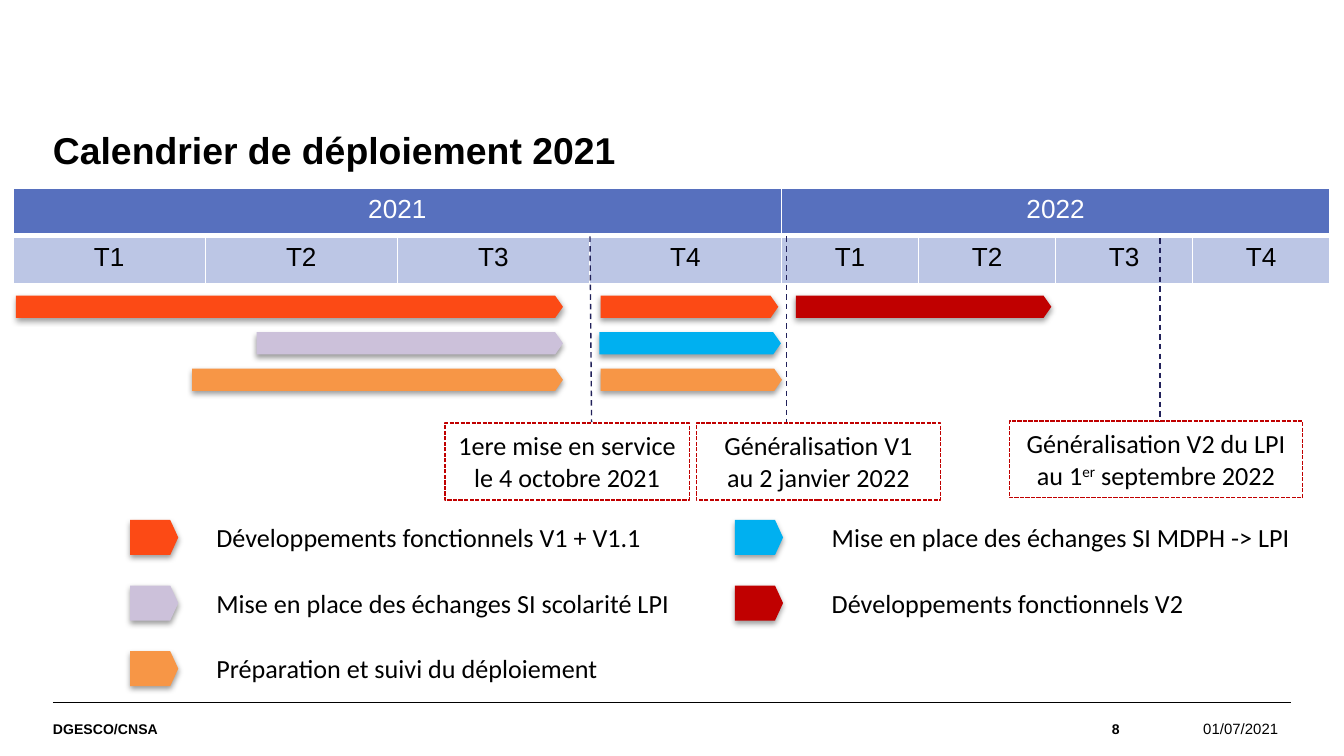
from typing import NamedTuple

from lxml import etree
from pptx import Presentation
from pptx.dml.color import RGBColor
from pptx.enum.dml import MSO_LINE
from pptx.enum.shapes import MSO_CONNECTOR, MSO_SHAPE
from pptx.enum.text import MSO_ANCHOR, MSO_AUTO_SIZE, PP_ALIGN
from pptx.oxml import parse_xml
from pptx.oxml.ns import nsdecls, qn
from pptx.util import Cm, Pt

PENTAGON, RECTANGLE = MSO_SHAPE.PENTAGON, MSO_SHAPE.RECTANGLE
STRAIGHT = MSO_CONNECTOR.STRAIGHT
LEFT, CENTER, RIGHT = PP_ALIGN.LEFT, PP_ALIGN.CENTER, PP_ALIGN.RIGHT
TOP, MIDDLE = MSO_ANCHOR.TOP, MSO_ANCHOR.MIDDLE
FIT_SHAPE = MSO_AUTO_SIZE.SHAPE_TO_FIT_TEXT
DASH, SHORT_DASH = MSO_LINE.DASH, MSO_LINE.SQUARE_DOT

BLACK, WHITE, NAVY = "000000", "FFFFFF", "21215A"
HEADER, QUARTER = "5770BE", "BCC6E5"
ORANGE, LILAC, AMBER = "FC4A15", "CCC1DA", "F79646"
BLUE, RED = "00B0F0", "C00000"


class Bar(NamedTuple):
    row: int
    left: float
    width: float
    color: str


class LegendItem(NamedTuple):
    column: int
    row: int
    color: str
    label: str
    width: float


class Milestone(NamedTuple):
    left: float
    top: float
    width: float
    runs: list[str]  # every second run is superscript
    line_top: tuple[float, float]
    line_end: tuple[float, float]


BAR_TOP, BAR_STEP, BAR_HEIGHT = 5.59, 0.69, 0.42
BARS = [
    Bar(0, 0.3, 10.34, ORANGE),
    Bar(1, 4.85, 5.79, LILAC),
    Bar(2, 3.63, 7.01, AMBER),
    Bar(0, 11.35, 3.36, ORANGE),
    Bar(1, 11.33, 3.43, BLUE),
    Bar(2, 11.35, 3.43, AMBER),
    Bar(0, 15.04, 4.83, RED),
]

LEGEND_TOP, LEGEND_STEP = 9.83, 1.24
LEGEND_COLUMNS = [(2.46, 3.84), (13.89, 15.47)]  # swatch left, label left
LEGEND = [
    LegendItem(0, 0, ORANGE, "Développements fonctionnels V1 + V1.1", 8.86),
    LegendItem(0, 1, LILAC, "Mise en place des échanges SI scolarité LPI", 9.3),
    LegendItem(0, 2, AMBER, "Préparation et suivi du déploiement", 9.19),
    LegendItem(1, 0, BLUE, "Mise en place des échanges SI MDPH -> LPI", 9.19),
    LegendItem(1, 1, RED, "Développements fonctionnels V2", 7.32),
]

MILESTONES = [
    Milestone(8.41, 8, 4.62, ["1ere mise en service le 4 octobre 2021"],
              (11.15, 4.47), (11.18, 7.98)),
    Milestone(13.16, 8, 4.62, ["Généralisation V1 au 2 janvier 2022"],
              (14.86, 4.47), (14.86, 7.98)),
    Milestone(19.08, 7.96, 5.54,
              ["Généralisation V2 du LPI au 1", "er", " septembre 2022"],
              (21.92, 4.5), (21.92, 7.96)),
]


def rgb(color: str) -> RGBColor:
    return RGBColor.from_string(color)


def style_paragraph(p, size: float, color: str = BLACK, font: str = "Arial",
                    bold: bool = False, align=LEFT) -> None:
    p.alignment = align
    p.font.size, p.font.name, p.font.bold = Pt(size), font, bold
    p.font.color.rgb = rgb(color)


def add_text(s, left: float, top: float, width: float, height: float,
             text: str, size: float, font: str = "Arial", bold: bool = False,
             align=LEFT, anchor=TOP, inset: bool = True):
    tf = s.shapes.add_textbox(Cm(left), Cm(top), Cm(width), Cm(height)).text_frame
    tf.word_wrap, tf.vertical_anchor = True, anchor
    if not inset:
        tf.margin_left = tf.margin_right = tf.margin_top = tf.margin_bottom = 0
    p = tf.paragraphs[0]
    p.text = text
    style_paragraph(p, size, font=font, bold=bold, align=align)
    return tf


def add_line(s, start: tuple[float, float], end: tuple[float, float],
             color: str, width: float, dash=None) -> None:
    line = s.shapes.add_connector(STRAIGHT, *map(Cm, start + end))
    line.line.color.rgb, line.line.width = rgb(color), Pt(width)
    if dash is not None:
        line.line.dash_style = dash
    etree.SubElement(line._element.spPr, qn("a:effectLst"))


def add_arrow_block(s, left: float, top: float, width: float, height: float,
                    color: str, point: float) -> None:
    """Draw a pentagon with a soft shadow below it."""
    sp = s.shapes.add_shape(PENTAGON, Cm(left), Cm(top), Cm(width), Cm(height))
    sp.adjustments[0] = point
    sp.fill.solid()
    sp.fill.fore_color.rgb = rgb(color)
    sp.line.fill.background()
    sp._element.spPr.append(parse_xml(
        f'<a:effectLst {nsdecls("a")}><a:outerShdw blurRad="{Pt(3.1)}" '
        f'dist="{Pt(1.6)}" dir="5400000" rotWithShape="0"><a:srgbClr val="{BLACK}">'
        '<a:alpha val="38000"/></a:srgbClr></a:outerShdw></a:effectLst>'))


def add_milestone(s, m: Milestone) -> None:
    add_line(s, m.line_top, m.line_end, NAVY, 0.75, DASH)
    sp = s.shapes.add_shape(RECTANGLE, Cm(m.left), Cm(m.top), Cm(m.width), Cm(1.45))
    sp.shadow.inherit = False
    sp.fill.background()
    sp.line.color.rgb, sp.line.width = rgb(RED), Pt(0.75)
    sp.line.dash_style = SHORT_DASH
    tf = sp.text_frame
    tf.word_wrap, tf.auto_size, tf.vertical_anchor = True, FIT_SHAPE, TOP
    p = tf.paragraphs[0]
    style_paragraph(p, 14, font="Calibri", align=CENTER)
    for i, text in enumerate(m.runs):
        r = p.add_run()
        r.text = text
        r.font.color.rgb = rgb(BLACK)
        if i % 2:
            r.font._element.set("baseline", "30000")


def fill_cell(cell, text: str, fill: str, color: str, bottom: float) -> None:
    cell.fill.solid()
    cell.fill.fore_color.rgb = rgb(fill)
    p = cell.text_frame.paragraphs[0]
    p.text = text
    style_paragraph(p, 14, color, align=CENTER)
    tc_pr = cell._tc.get_or_add_tcPr()
    for i, (side, width) in enumerate(
            [("lnL", 1), ("lnR", 1), ("lnT", 1), ("lnB", bottom)]):
        tc_pr.insert(i, parse_xml(
            f'<a:{side} {nsdecls("a")} w="{Pt(width)}"><a:solidFill>'
            f'<a:srgbClr val="{WHITE}"/></a:solidFill></a:{side}>'))


def add_quarters_table(s) -> None:
    widths = [3.63] * 4 + [2.59] * 4
    table = s.shapes.add_table(2, 8, Cm(0.25), Cm(3.56),
                               Cm(sum(widths)), Cm(1.8)).table
    for column, width in zip(table.columns, widths):
        column.width = Cm(width)
    for i in range(8):
        year = str(2021 + i // 4) if i % 4 == 0 else ""
        fill_cell(table.cell(0, i), year, HEADER, WHITE, 3)
        fill_cell(table.cell(1, i), f"T{i % 4 + 1}", QUARTER, BLACK, 1)
    for first in (0, 4):
        table.cell(0, first).merge(table.cell(0, first + 3))


def main() -> None:
    prs = Presentation()
    prs.slide_width, prs.slide_height = Cm(25.4), Cm(14.29)
    s = prs.slides.add_slide(prs.slide_layouts[6])

    add_line(s, (1, 13.28), (24.4, 13.28), BLACK, 0.8)
    title = add_text(s, 1, 2.5, 23.4, 2, "Calendrier de déploiement 2021", 20,
                     bold=True, inset=False)
    title.paragraphs[0].line_spacing = 0.9
    add_text(s, 1, 13.28, 16.4, 1, "DGESCO/CNSA", 7.5, bold=True,
             anchor=MIDDLE, inset=False)
    add_text(s, 17.4, 13.28, 3.76, 1, "8", 7.5, bold=True, align=RIGHT,
             anchor=MIDDLE, inset=False)
    add_text(s, 21.16, 13.28, 3.25, 1, "01/07/2021", 8, align=RIGHT, anchor=MIDDLE)

    add_quarters_table(s)
    for bar in BARS:
        add_arrow_block(s, bar.left, BAR_TOP + bar.row * BAR_STEP,
                        bar.width, BAR_HEIGHT, bar.color, 0.35)
    for milestone in MILESTONES:
        add_milestone(s, milestone)
    for item in LEGEND:
        swatch_left, label_left = LEGEND_COLUMNS[item.column]
        top = LEGEND_TOP + item.row * LEGEND_STEP
        add_arrow_block(s, swatch_left, top, 0.91, 0.66, item.color, 0.23)
        label = add_text(s, label_left, top - 0.1, item.width, 0.86,
                         item.label, 14, font="Calibri")
        label.auto_size = FIT_SHAPE

    prs.save("out.pptx")


if __name__ == "__main__":
    main()
